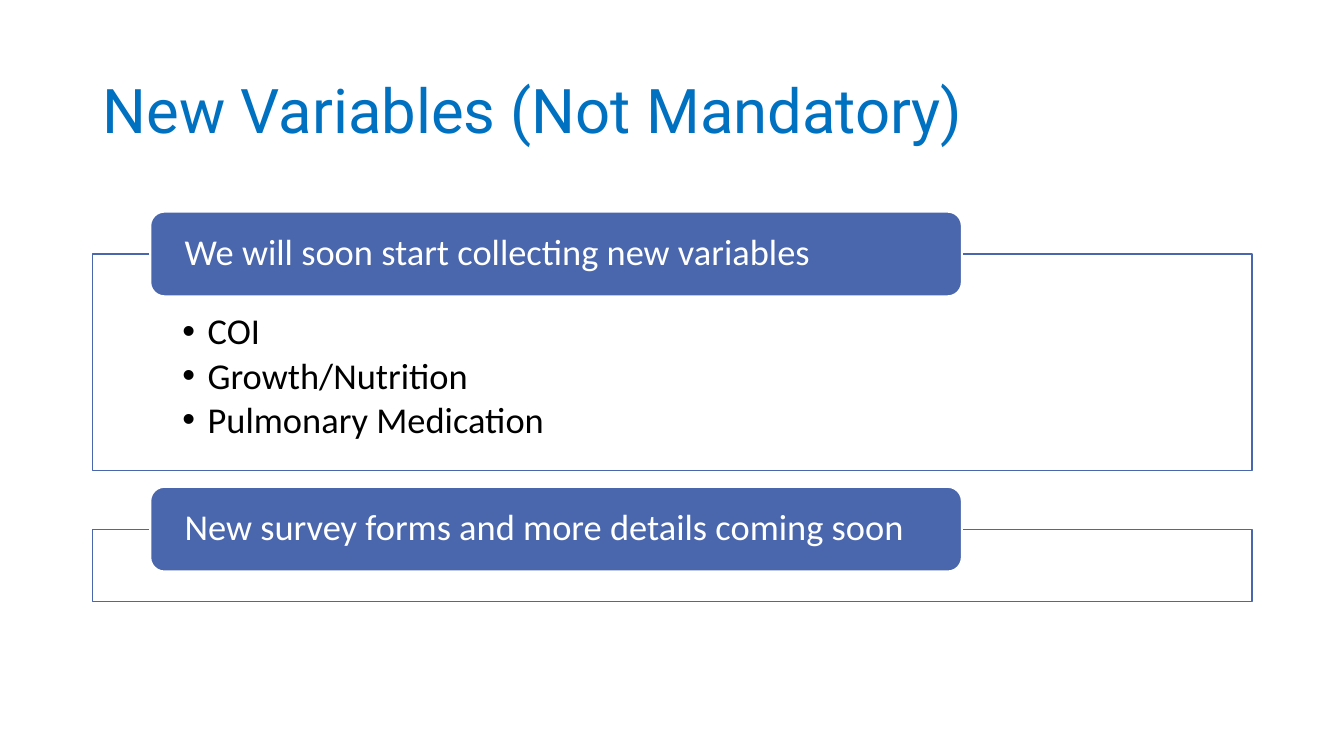
from lxml import etree
from pptx import Presentation
from pptx.dml.color import RGBColor
from pptx.enum.shapes import MSO_SHAPE
from pptx.enum.text import MSO_ANCHOR, PP_ALIGN
from pptx.oxml.ns import qn
from pptx.util import Inches, Pt

RECT, ROUND_RECT = MSO_SHAPE.RECTANGLE, MSO_SHAPE.ROUNDED_RECTANGLE
TOP, MIDDLE = MSO_ANCHOR.TOP, MSO_ANCHOR.MIDDLE
LEFT = PP_ALIGN.LEFT

TITLE_BLUE = RGBColor(0x00, 0x70, 0xC0)
BLUE = RGBColor(0x4A, 0x66, 0xAC)
WHITE = RGBColor(0xFF, 0xFF, 0xFF)
BLACK = RGBColor(0x00, 0x00, 0x00)

PANEL_LEFT, PANEL_WIDTH = 0.92, 11.5
LABEL_LEFT, LABEL_WIDTH, LABEL_HEIGHT = 1.49, 8.05, 0.84

# Label text, bullets, panel top, panel height
SECTIONS = [
    ("We will soon start collecting new variables",
     ["COI", "Growth/Nutrition", "Pulmonary Medication"], 2.52, 2.15),
    ("New survey forms and more details coming soon", [], 5.25, 0.72),
]


def add_bullet(p):
    pPr = p._p.get_or_add_pPr()
    pPr.set("marL", str(Inches(0.25)))
    pPr.set("indent", str(-Inches(0.25)))
    etree.SubElement(pPr, qn("a:buFont"), typeface="Arial")
    etree.SubElement(pPr, qn("a:buChar"), char="•")


def set_text(s, lines, size=26, font="Calibri", color=BLACK, anchor=MIDDLE,
             insets=(0.1, 0.05, 0.1, 0.05), bullets=False, space_after=0):
    tf = s.text_frame
    tf.word_wrap = True
    tf.vertical_anchor = anchor
    (tf.margin_left, tf.margin_top,
     tf.margin_right, tf.margin_bottom) = map(Inches, insets)
    for i, line in enumerate(lines):
        p = tf.add_paragraph() if i else tf.paragraphs[0]
        if bullets:
            p.level = 1
            add_bullet(p)
        p.alignment = LEFT
        p.line_spacing = 0.9
        p.space_before = Pt(0)
        p.space_after = Pt(space_after)
        r = p.add_run()
        r.text = line
        r.font.size = Pt(size)
        r.font.name = font
        r.font.color.rgb = color


def add_box(slide, kind, left, top, width, height, fill, line, line_width):
    s = slide.shapes.add_shape(kind, Inches(left), Inches(top),
                               Inches(width), Inches(height))
    s.shadow.inherit = False
    s.fill.solid()
    s.fill.fore_color.rgb = fill
    s.line.color.rgb = line
    s.line.width = Pt(line_width)
    return s


def add_section(slide, label, items, top, height):
    # Outlined panel with its bullets
    panel = add_box(slide, RECT, PANEL_LEFT, top, PANEL_WIDTH, height,
                    WHITE, BLUE, 1)
    if items:
        set_text(panel, items, anchor=TOP, insets=(0.89, 0.59, 0.89, 0.2),
                 bullets=True, space_after=3.5)
    # Label centred on the panel's top edge
    tab = add_box(slide, ROUND_RECT, LABEL_LEFT, top - LABEL_HEIGHT / 2,
                  LABEL_WIDTH, LABEL_HEIGHT, BLUE, WHITE, 1.5)
    set_text(tab, [label], color=WHITE, insets=(0.3, 0, 0.3, 0))


def main():
    prs = Presentation()
    prs.slide_width, prs.slide_height = Inches(13.33), Inches(7.5)
    slide = prs.slides.add_slide(prs.slide_layouts[5])

    # Title
    title = slide.shapes.title
    title.left, title.top = Inches(PANEL_LEFT), Inches(0.4)
    title.width, title.height = Inches(PANEL_WIDTH), Inches(1.45)
    set_text(title, ["New Variables (Not Mandatory)"], size=44,
             font="Roboto", color=TITLE_BLUE)

    # Sections
    for section in SECTIONS:
        add_section(slide, *section)

    prs.save("out.pptx")


if __name__ == "__main__":
    main()
